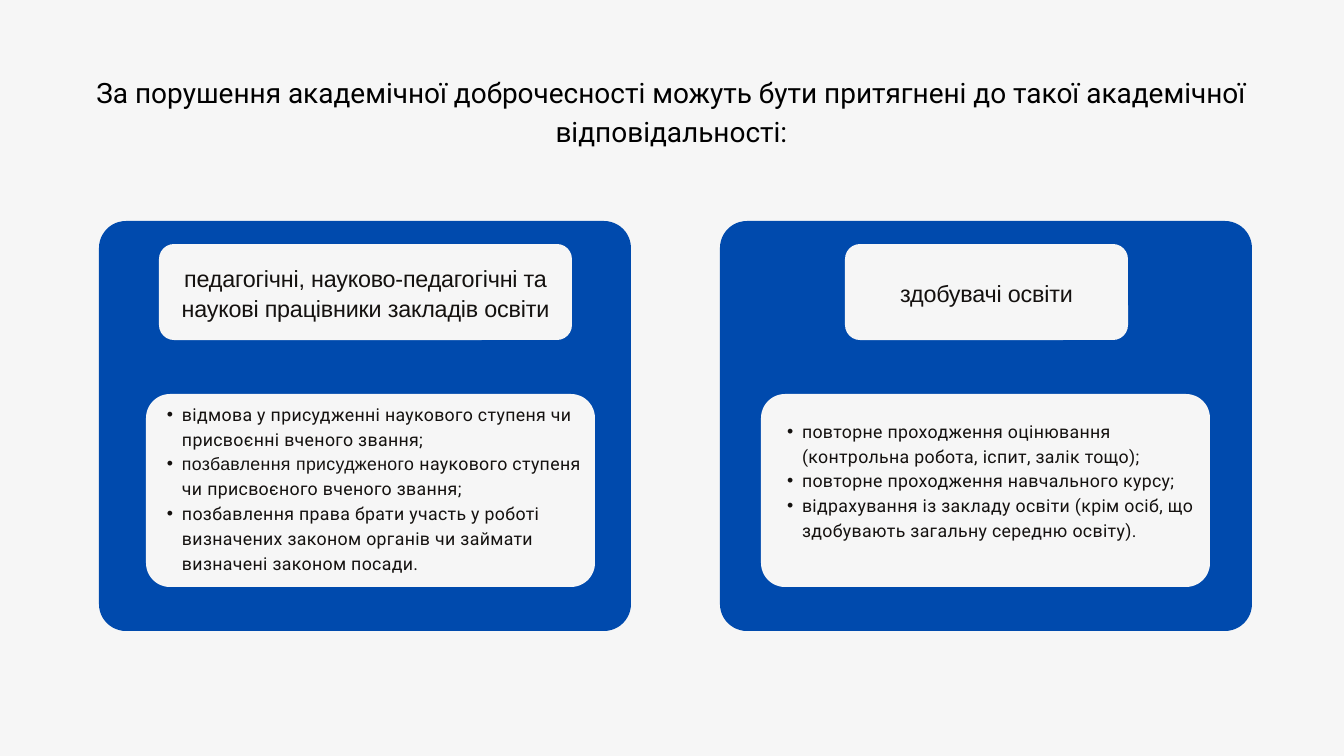
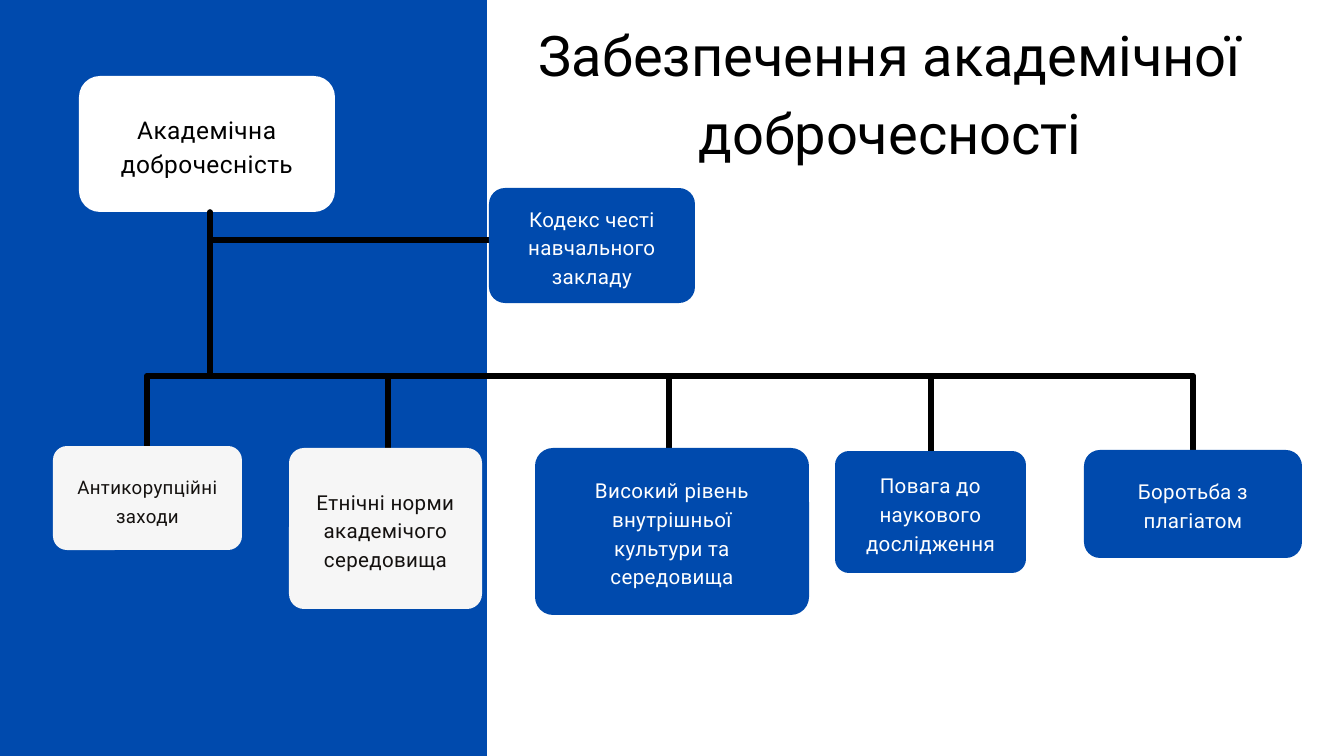
from pptx import Presentation, util as u
from pptx.dml.color import RGBColor
from pptx.enum import shapes as kinds, text as t
from pptx.oxml import ns, xmlchemy

# Shared look
BLUE = RGBColor(0x00, 0x4A, 0xAD)
PALE = RGBColor(0xF6, 0xF6, 0xF6)
WHITE = RGBColor(0xFF, 0xFF, 0xFF)
BLACK = RGBColor(0, 0, 0)
INK = RGBColor(0x14, 0x11, 0x0F)
SANS, PLAIN = "Roboto", "Arial"
WIDTH, HEIGHT = 1344, 756
SCALE = u.Inches(20) / WIDTH
CORNER_INSET = 0.29  # share of a corner radius that a rounded box keeps free of text

# Slide 1: title, then one panel for each group
DUTY_TITLE = ("За порушення академічної доброчесності можуть бути притягнені "
              "до такої академічної відповідальності:")
PANEL_TOP, PANEL_WIDTH, PANEL_HEIGHT = 221, 532, 410
HEADER_TOP, HEADER_HEIGHT = 244, 96
CARD_TOP, CARD_WIDTH, CARD_HEIGHT = 394, 449, 193
PANELS = [
    dict(left=99, header="педагогічні, науково-педагогічні та наукові працівники закладів освіти",
         header_width=413, header_left=159, text_width=387,
         card_left=146, list_box=(152, 400, 437, 194),
         items=[[("відмова у присудженні наукового ступеня чи присвоєнні вченого звання;", SANS)],
                [("позбавлення присудженого", PLAIN),
                 (" наукового ступеня чи присвоєного вченого звання;", SANS)],
                [("позбавлення права брати участь у роботі визначених законом органів "
                  "чи займати визначені законом посади.", SANS)]]),
    dict(left=720, header="здобувачі освіти",
         header_width=283, header_left=845, text_width=185,
         card_left=761, list_box=(772, 417, 439, 144),
         items=[[("повторне проходження оцінювання (контрольна робота, іспит, залік тощо);", SANS)],
                [("повторне проходження навчального курсу;", SANS)],
                [("відрахування із закладу освіти (крім осіб, що здобувають "
                  "загальну середню освіту).", SANS)]]),
]

# Slide 2: title, root, code of honour, and the branches below the bus line
SCHEME_TITLE = "Забезпечення академічної доброчесності"
SIDE_WIDTH = 487
ROOT = ("Академічна доброчесність", (79, 76, 256, 136), 21, 185)
CODE = ("Кодекс честі навчального закладу", (489, 188, 206, 115), 16, 202)
TRUNK_X, CODE_Y, BUS_Y = 210, 240, 376
# text, box, corner radius, text width, stem x, text size, fill, text colour
BRANCHES = [
    ("Антикорупційні заходи", (53, 446, 189, 104), 14, 146, 147, 20, PALE, INK),
    ("Етнічні норми академічого середовища", (289, 448, 193, 161), 15, 147, 388, 22, PALE, INK),
    ("Високий рівень внутрішньої культури та середовища",
     (535, 448, 274, 167), 18, 208, 669, 22, BLUE, WHITE),
    ("Повага до наукового дослідження", (835, 451, 191, 122), 14, 146, 931, 22, BLUE, WHITE),
    ("Боротьба з плагіатом", (1084, 450, 218, 108), 16, 167, 1193, 22, BLUE, WHITE),
]


def px(value):
    return u.Emu(round(value * SCALE))


def place(shape, box):
    shape.left, shape.top, shape.width, shape.height = map(px, box)


def clear_frame(frame, anchor, side=0):
    frame.word_wrap = True
    frame.auto_size = t.MSO_AUTO_SIZE.NONE
    frame.vertical_anchor = anchor
    frame.margin_left = frame.margin_right = px(side)
    frame.margin_top = frame.margin_bottom = 0


def style(paragraph, size, leading, color, font=None, spacing=0, align=t.PP_ALIGN.CENTER):
    paragraph.alignment = align
    paragraph.line_spacing = u.Pt(leading)
    paragraph.space_before = paragraph.space_after = u.Pt(0)
    for run in paragraph.runs:
        run.font.size = u.Pt(size)
        run.font.color.rgb = color
        if font:
            run.font.name = font
        if spacing:
            run.font._element.set("spc", str(round(spacing * 100)))


def new_slide(layout, background, title, box, size, leading):
    slide = presentation.slides.add_slide(presentation.slide_layouts.get_by_name(layout))
    slide.background.fill.solid()
    slide.background.fill.fore_color.rgb = background
    place(slide.shapes.title, box)
    frame = slide.shapes.title.text_frame
    frame.text = title
    clear_frame(frame, t.MSO_ANCHOR.TOP)
    style(frame.paragraphs[0], size, leading, BLACK, SANS)
    return slide


def add_block(slide, box, fill, radius=0):
    kind = kinds.MSO_SHAPE.ROUNDED_RECTANGLE if radius else kinds.MSO_SHAPE.RECTANGLE
    shape = slide.shapes.add_shape(kind, *map(px, box))
    if radius:
        shape.adjustments[0] = radius / min(box[2:])
    shape.shadow.inherit = False
    shape.fill.solid()
    shape.fill.fore_color.rgb = fill
    shape.line.fill.background()
    return shape


def add_label(slide, label, box, radius, text_width, fill, **look):
    frame = add_block(slide, box, fill, radius).text_frame
    frame.text = label
    side = max(0, (box[2] - text_width) / 2 - CORNER_INSET * radius)
    clear_frame(frame, t.MSO_ANCHOR.MIDDLE, side)
    style(frame.paragraphs[0], **look)


def add_line(slide, *ends):
    line = slide.shapes.add_connector(kinds.MSO_CONNECTOR.STRAIGHT, *map(px, ends))
    line.line.color.rgb = BLACK
    line.line.width = u.Pt(6)
    line.line._get_or_add_ln().set("cap", "rnd")
    line._element.spPr.append(xmlchemy.OxmlElement("a:effectLst"))


def fill_list(slide, placeholder, box, items):
    place(placeholder, box)
    slide.shapes._spTree.append(placeholder._element)  # bring in front of its card
    frame = placeholder.text_frame
    clear_frame(frame, t.MSO_ANCHOR.TOP)
    for number, parts in enumerate(items):
        paragraph = frame.add_paragraph() if number else frame.paragraphs[0]
        for words, font in parts:
            run = paragraph.add_run()
            run.text = words
            run.font.name = font
        style(paragraph, 19, 26.6, INK, spacing=0.4, align=t.PP_ALIGN.LEFT)
        properties = paragraph._p.get_or_add_pPr()
        properties.set("marL", str(px(30)))
        properties.set("indent", str(px(-15)))
        bullet = xmlchemy.OxmlElement("a:buChar")
        bullet.set("char", "•")
        properties.append(bullet)


presentation = Presentation()
presentation.slide_width, presentation.slide_height = px(WIDTH), px(HEIGHT)

# Slide 1
slide = new_slide("Two Content", PALE, DUTY_TITLE, (75, 70, 1193, 79), 30, 42)
bodies = [shape for shape in slide.placeholders if shape.placeholder_format.idx]
for panel, body in zip(PANELS, bodies):
    add_block(slide, (panel["left"], PANEL_TOP, PANEL_WIDTH, PANEL_HEIGHT), BLUE, 27)
    header_box = (panel["header_left"], HEADER_TOP, panel["header_width"], HEADER_HEIGHT)
    add_label(slide, panel["header"], header_box, 15, panel["text_width"], PALE,
              size=25, leading=32.5, color=INK, font=PLAIN, spacing=-0.2)
    add_block(slide, (panel["card_left"], CARD_TOP, CARD_WIDTH, CARD_HEIGHT), PALE, 24)
    fill_list(slide, body, panel["list_box"], panel["items"])

# Slide 2
slide = new_slide("Title Only", WHITE, SCHEME_TITLE, (489, 9, 802, 154), 60, 84)
add_block(slide, (0, 0, SIDE_WIDTH, HEIGHT), BLUE)
add_label(slide, *ROOT, WHITE, size=26.2, leading=36.6, color=BLACK, font=SANS, spacing=0.5)

# Trunk, link to the code, bus
root_box, code_box = ROOT[1], CODE[1]
stems = [branch[4] for branch in BRANCHES]
add_line(slide, TRUNK_X, BUS_Y, TRUNK_X, root_box[1] + root_box[3])
add_line(slide, code_box[0], CODE_Y, TRUNK_X, CODE_Y)
add_line(slide, stems[-1], BUS_Y, stems[0], BUS_Y)
add_label(slide, *CODE, BLUE, size=22, leading=30.8, color=WHITE, font=SANS, spacing=0.4)

# Branches
for label, box, radius, text_width, stem, size, fill, color in BRANCHES:
    add_line(slide, stem, box[1], stem, BUS_Y)
    add_label(slide, label, box, radius, text_width, fill,
              size=size, leading=30.8, color=color, font=SANS, spacing=0.4)

# Send the side band behind the title
title = slide.shapes.title._element
slide.shapes._spTree.append(title)

presentation.save("out.pptx")
